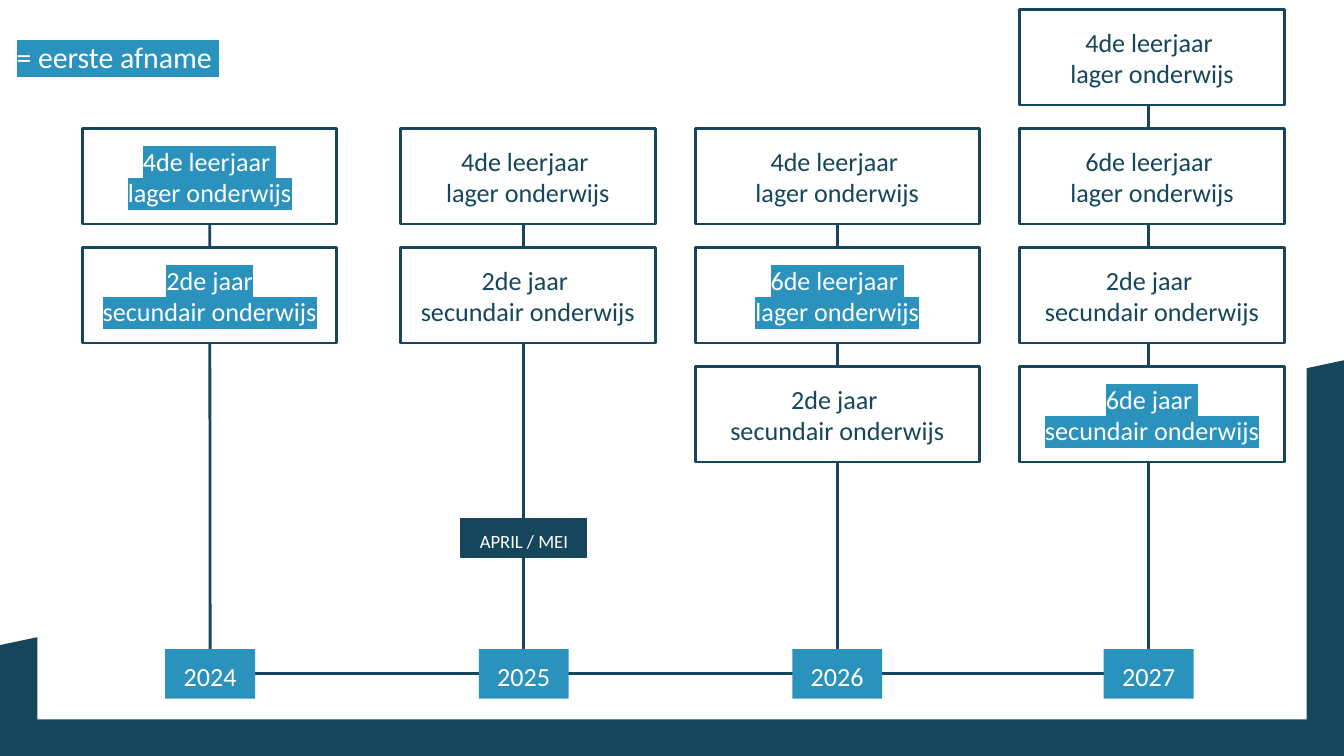
from lxml.etree import SubElement
from pptx import Presentation
from pptx.dml.color import RGBColor
from pptx.enum.shapes import MSO_CONNECTOR, MSO_SHAPE
from pptx.enum.text import MSO_ANCHOR, MSO_AUTO_SIZE, PP_ALIGN
from pptx.oxml.ns import qn
from pptx.util import Pt

COLORS = {"navy": "15465B", "blue": "2B92BE", "white": "FFFFFF"}
FONT = "Calibri"

SLIDE_W, SLIDE_H = 720, 405
CARD_H = 51.1
ROW_TOP, ROW_PITCH = 5.2, 63.75
BADGE_W, BADGE_H, BADGE_TOP = 48.2, 26.6, 347.8
AXIS_Y = 361

LAGER_4 = "4de leerjaar \vlager onderwijs"
LAGER_6 = "6de leerjaar \vlager onderwijs"
SECUNDAIR_2 = "2de jaar \vsecundair onderwijs"
SECUNDAIR_6 = "6de jaar \vsecundair onderwijs"

# year, stem x, card left, card width, first row, cards (text, first test?)
YEARS = [
    ("2024", 112.6, 44.2, 136.3, 1,
     [(LAGER_4, True), ("2de jaar\vsecundair onderwijs", True)]),
    ("2025", 280.6, 214.5, 136.6, 1,
     [(LAGER_4, False), (SECUNDAIR_2, False)]),
    ("2026", 448.6, 372.6, 152, 1,
     [(LAGER_4, False), (LAGER_6, True), (SECUNDAIR_2, False)]),
    ("2027", 615.4, 546.2, 142, 0,
     [(LAGER_4, False), (LAGER_6, False), (SECUNDAIR_2, False),
      (SECUNDAIR_6, True)]),
]


def rgb(name):
    return RGBColor.from_string(COLORS[name])


def paint(shape, fill, line=None, width=1.5):
    shape.shadow.inherit = False
    shape.fill.solid()
    shape.fill.fore_color.rgb = rgb(fill)
    if line:
        shape.line.color.rgb = rgb(line)
        shape.line.width = Pt(width)
    else:
        shape.line.fill.background()


def add_box(slide, left, top, width, height, fill, line=None, line_width=1.5):
    box = slide.shapes.add_shape(
        MSO_SHAPE.RECTANGLE, Pt(left), Pt(top), Pt(width), Pt(height))
    paint(box, fill, line, line_width)
    return box


def set_insets(frame, left, top, right, bottom):
    frame.margin_left, frame.margin_top = Pt(left), Pt(top)
    frame.margin_right, frame.margin_bottom = Pt(right), Pt(bottom)


def write(frame, text, size, color, spacing=None, highlight=False):
    frame.word_wrap = True
    paragraph = frame.paragraphs[0]
    paragraph.text = text
    paragraph.alignment = PP_ALIGN.CENTER
    if spacing:
        paragraph.line_spacing = spacing
    paragraph.font.name = FONT
    paragraph.font.size = Pt(size)
    paragraph.font.color.rgb = rgb(color)
    if highlight:
        for run in paragraph.runs:
            marker = SubElement(run.font._element, qn("a:highlight"))
            SubElement(marker, qn("a:srgbClr"), val=COLORS["blue"])


def add_line(slide, x1, y1, x2, y2):
    line = slide.shapes.add_connector(
        MSO_CONNECTOR.STRAIGHT, Pt(x1), Pt(y1), Pt(x2), Pt(y2))
    line.line.color.rgb = rgb("navy")
    line.line.width = Pt(1.5)
    SubElement(line._element.spPr, qn("a:effectLst"))
    return line


def add_frame(slide):
    """Slanted navy backdrop with a white panel on top."""
    outline = slide.shapes.build_freeform(Pt(SLIDE_W), Pt(193), scale=1)
    outline.add_line_segments(
        [(Pt(SLIDE_W), Pt(SLIDE_H)), (0, Pt(SLIDE_H)), (0, Pt(345.6))])
    paint(outline.convert_to_shape(), "navy")
    add_box(slide, 20, 20, 680, 365.5, "white")


def add_card(slide, left, row, width, text, first_test):
    card = add_box(slide, left, ROW_TOP + row * ROW_PITCH, width, CARD_H,
                   "white", "navy")
    frame = card.text_frame
    frame.vertical_anchor = MSO_ANCHOR.MIDDLE
    frame.auto_size = MSO_AUTO_SIZE.SHAPE_TO_FIT_TEXT
    set_insets(frame, 8.6, 8.6, 8.6, 8.6)
    write(frame, text, 14, "white" if first_test else "navy",
          highlight=first_test)
    return card


def add_column(slide, stem_x, left, width, first_row, cards):
    """Stack of cards with the stem running behind all but the top one."""
    for i, (text, first_test) in enumerate(cards):
        card = add_card(slide, left, first_row + i, width, text, first_test)
        if i == 0:
            stem_top = ROW_TOP + first_row * ROW_PITCH + CARD_H
            stem = add_line(slide, stem_x, stem_top, stem_x, AXIS_Y)
            if abs(left + width / 2 - stem_x) < 1:
                stem.begin_connect(card, 2)


def add_year(slide, stem_x, year):
    badge = add_box(slide, stem_x - BADGE_W / 2, BADGE_TOP, BADGE_W, BADGE_H,
                    "blue")
    badge.text_frame.vertical_anchor = MSO_ANCHOR.MIDDLE
    set_insets(badge.text_frame, 0, 0, 0, 5.8)
    write(badge.text_frame, year, 14, "white", spacing=1.5)


def add_legend(slide):
    legend = slide.shapes.add_textbox(Pt(-10.8), Pt(17.3), Pt(147.6), Pt(26.6))
    legend.text_frame.auto_size = MSO_AUTO_SIZE.SHAPE_TO_FIT_TEXT
    write(legend.text_frame, "= eerste afname ", 16, "white", highlight=True)


def add_period(slide):
    period = add_box(slide, 247, 277.9, 67.4, 20.7, "navy", "navy", 0.75)
    period.text_frame.vertical_anchor = MSO_ANCHOR.TOP
    set_insets(period.text_frame, 0, 0, 0, 0)
    write(period.text_frame, "APRIL / MEI", 10, "white", spacing=1.5)


def main():
    prs = Presentation()
    prs.slide_width, prs.slide_height = Pt(SLIDE_W), Pt(SLIDE_H)
    slide = prs.slides.add_slide(prs.slide_layouts[6])

    add_frame(slide)

    # Test groups per year
    for _, stem_x, left, width, first_row, cards in YEARS:
        add_column(slide, stem_x, left, width, first_row, cards)

    # Time axis with the years
    add_line(slide, 88.6, AXIS_Y, 609, AXIS_Y)
    for year, stem_x, *_ in YEARS:
        add_year(slide, stem_x, year)

    # Labels
    add_legend(slide)
    add_period(slide)

    prs.save("out.pptx")


if __name__ == "__main__":
    main()
